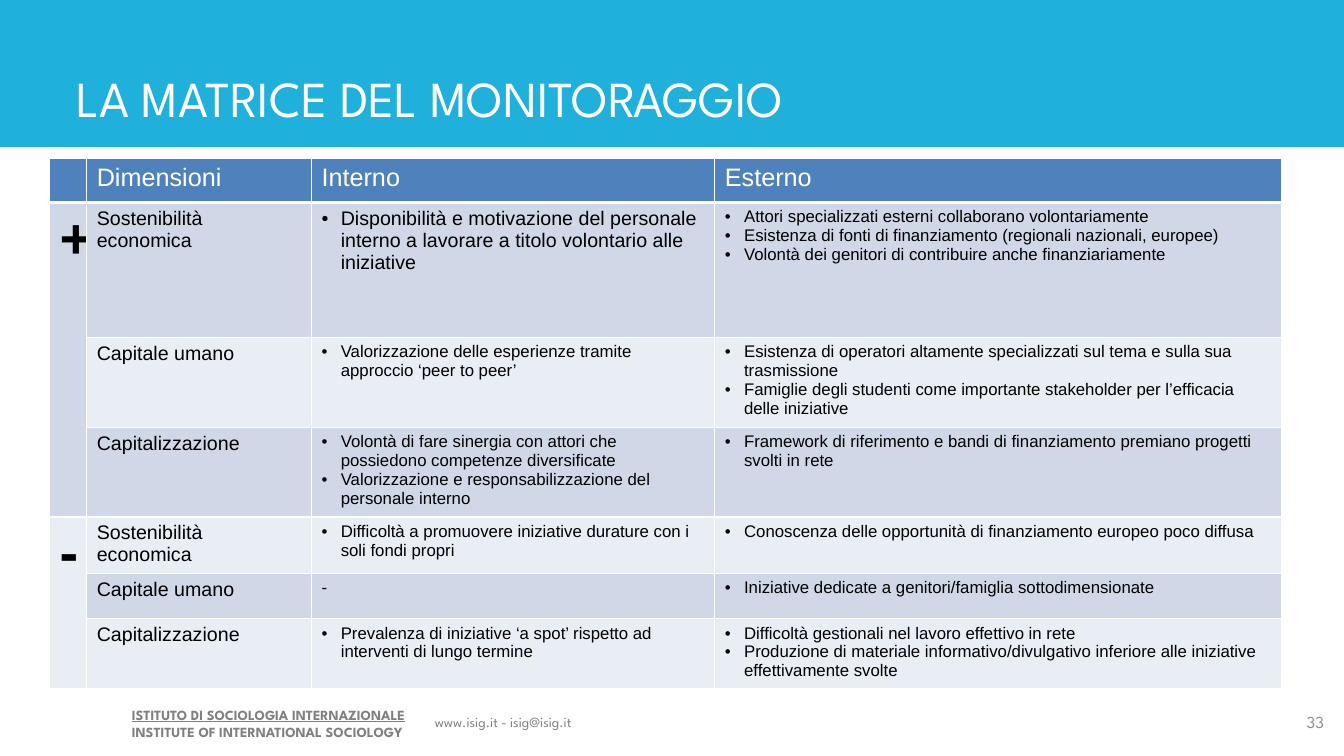
from pptx import Presentation
from pptx.dml.color import RGBColor
from pptx.enum.shapes import MSO_SHAPE
from pptx.enum.text import MSO_ANCHOR, MSO_AUTO_SIZE, PP_ALIGN
from pptx.oxml.ns import qn
from pptx.util import Inches, Pt
from lxml import etree

RECTANGLE = MSO_SHAPE.RECTANGLE
TOP, MIDDLE, BOTTOM = MSO_ANCHOR.TOP, MSO_ANCHOR.MIDDLE, MSO_ANCHOR.BOTTOM
LEFT, CENTER, RIGHT = PP_ALIGN.LEFT, PP_ALIGN.CENTER, PP_ALIGN.RIGHT
JUSTIFY = PP_ALIGN.JUSTIFY
NO_AUTOFIT = MSO_AUTO_SIZE.NONE
TITLE_ONLY = 5

COLORS = {
    "banner": "1FB0DC", "header": "4F81BD", "dark band": "D0D8E8",
    "light band": "E9EDF4", "white": "FFFFFF", "black": "000000",
    "institute": "7F7F7F", "contact": "808080", "number": "8C8C8C",
}
HEADING_FONT, TABLE_FONT = "League Spartan", "Arial"

COLUMN_WIDTHS = [0.37, 2.23, 4, 5.62]
ROW_HEIGHTS = [0.44, 1.34, 0.89, 0.89, 0.56, 0.45, 0.69]
HEADERS = ["Dimensioni", "Interno", "Esterno"]
DIMENSIONS = ["Sostenibilità economica", "Capitale umano", "Capitalizzazione"]
SIGNS = [("+", CENTER, "dark band"), ("-", LEFT, "light band")]

# One pair of lists (internal, external) for each row below the header
FACTORS = [
    (["Disponibilità e motivazione del personale interno a lavorare a titolo volontario alle iniziative"],
     ["Attori specializzati esterni collaborano volontariamente",
      "Esistenza di fonti di finanziamento (regionali nazionali, europee)",
      "Volontà dei genitori di contribuire anche finanziariamente"]),
    (["Valorizzazione delle esperienze tramite approccio ‘peer to peer’"],
     ["Esistenza di operatori altamente specializzati sul tema e sulla sua trasmissione",
      "Famiglie degli studenti come importante stakeholder per l’efficacia delle iniziative"]),
    (["Volontà di fare sinergia con attori che possiedono competenze diversificate",
      "Valorizzazione e responsabilizzazione del personale interno"],
     ["Framework di riferimento e bandi di finanziamento premiano progetti svolti in rete"]),
    (["Difficoltà a promuovere iniziative durature con i soli fondi propri"],
     ["Conoscenza delle opportunità di finanziamento europeo poco diffusa"]),
    (["-"],
     ["Iniziative dedicate a genitori/famiglia sottodimensionate"]),
    (["Prevalenza di iniziative ‘a spot’ rispetto ad interventi di lungo termine"],
     ["Difficoltà gestionali nel lavoro effettivo in rete",
      "Produzione di materiale informativo/divulgativo inferiore alle iniziative effettivamente svolte"]),
]


def color(name):
    return RGBColor.from_string(COLORS[name])


def format_paragraph(paragraph, text, size, color_name, font=TABLE_FONT,
                     align=LEFT, bold=False, underline=False):
    paragraph.text = text
    paragraph.alignment = align
    text_format = {"name": font, "size": Pt(size), "bold": bold, "underline": underline}
    for run in paragraph.runs:
        for attribute, value in text_format.items():
            setattr(run.font, attribute, value)
        run.font.color.rgb = color(color_name)


def add_bullet(paragraph):
    properties = paragraph._p.get_or_add_pPr()
    properties.set("marL", str(Inches(0.19)))
    properties.set("indent", str(Inches(-0.19)))
    etree.SubElement(properties, qn("a:buFont")).set("typeface", TABLE_FONT)
    etree.SubElement(properties, qn("a:buChar")).set("char", "•")


def add_banner(slide, title):
    banner = slide.shapes.add_shape(RECTANGLE, 0, 0, Inches(13.33), Inches(1.46))
    banner.shadow.inherit = False
    banner.fill.solid()
    banner.fill.fore_color.rgb = color("banner")
    banner.line.fill.background()
    title.element.addprevious(banner.element)


def fill_title(title, text):
    position = {"left": 0.66, "top": 0.19, "width": 11.14, "height": 1.13}
    for attribute, value in position.items():
        setattr(title, attribute, Inches(value))
    title.text_frame.auto_size = NO_AUTOFIT
    title.text_frame.vertical_anchor = BOTTOM
    format_paragraph(title.text_frame.paragraphs[0], text, 36, "white", HEADING_FONT)


def add_text(slide, left, top, width, height, lines, size, color_name,
             align, wrap=False, anchor=TOP):
    """Each line is a pair: its text and the formats special to it."""
    box = slide.shapes.add_textbox(*map(Inches, (left, top, width, height)))
    frame = box.text_frame
    frame.word_wrap = wrap
    frame.vertical_anchor = anchor
    for index, (text, special) in enumerate(lines):
        paragraph = frame.add_paragraph() if index else frame.paragraphs[0]
        format_paragraph(paragraph, text, size, color_name, HEADING_FONT, align, **special)


def style_cell(cell, fill_name, bottom_width=1):
    properties = cell._tc.get_or_add_tcPr()
    for side, width in {"L": 1, "R": 1, "T": 1, "B": bottom_width}.items():
        line = etree.SubElement(properties, qn(f"a:ln{side}"), w=str(Pt(width)))
        line_fill = etree.SubElement(line, qn("a:solidFill"))
        etree.SubElement(line_fill, qn("a:srgbClr"), val=COLORS["white"])
    cell.fill.solid()
    cell.fill.fore_color.rgb = color(fill_name)


def fill_factors(cell, factors, size):
    for index, factor in enumerate(factors):
        paragraph = cell.text_frame.add_paragraph() if index else cell.text_frame.paragraphs[0]
        if factor != "-":
            add_bullet(paragraph)
        format_paragraph(paragraph, factor, size, "black")


def add_matrix(slide):
    frame = slide.shapes.add_table(
        len(ROW_HEIGHTS), len(COLUMN_WIDTHS), Inches(0.49), Inches(1.57),
        Inches(sum(COLUMN_WIDTHS)), Inches(sum(ROW_HEIGHTS)))
    table = frame.table
    for column, width in zip(table.columns, COLUMN_WIDTHS):
        column.width = Inches(width)
    for row, height in zip(table.rows, ROW_HEIGHTS):
        row.height = Inches(height)

    # Header row
    for cell in table.rows[0].cells:
        style_cell(cell, "header", bottom_width=3)
    for column, header in enumerate(HEADERS, start=1):
        format_paragraph(table.cell(0, column).text_frame.paragraphs[0], header, 18, "white")

    # Dimensions with their internal and external factors
    for row, (internal, external) in enumerate(FACTORS, start=1):
        band = "dark band" if row % 2 else "light band"
        for column in range(1, len(COLUMN_WIDTHS)):
            style_cell(table.cell(row, column), band)
        dimension = DIMENSIONS[(row - 1) % len(DIMENSIONS)]
        format_paragraph(table.cell(row, 1).text_frame.paragraphs[0], dimension, 14, "black")
        fill_factors(table.cell(row, 2), internal, 14 if row == 1 else 12)
        fill_factors(table.cell(row, 3), external, 12)

    # Plus and minus, each beside one set of dimensions
    span = len(DIMENSIONS)
    for index, (sign, align, band) in enumerate(SIGNS):
        first = 1 + index * span
        for row in range(first, first + span):
            style_cell(table.cell(row, 0), band)
        cell = table.cell(first, 0)
        cell.merge(table.cell(first + span - 1, 0))
        format_paragraph(cell.text_frame.paragraphs[0], sign, 40, "black", align=align, bold=True)


def main():
    presentation = Presentation()
    presentation.slide_width = Inches(13.33)
    presentation.slide_height = Inches(7.5)
    slide = presentation.slides.add_slide(presentation.slide_layouts[TITLE_ONLY])

    # Heading
    title = slide.shapes.title
    add_banner(slide, title)
    fill_title(title, "LA MATRICE DEL MONITORAGGIO")

    add_matrix(slide)

    # Footer
    institute = [
        ("ISTITUTO DI SOCIOLOGIA INTERNAZIONALE", {"bold": True, "underline": True}),
        ("INSTITUTE OF INTERNATIONAL SOCIOLOGY", {"bold": True}),
    ]
    add_text(slide, 1.21, 6.96, 3.02, 0.44, institute, 10, "institute", JUSTIFY)
    add_text(slide, 4.15, 7.03, 1.68, 0.27, [("www.isig.it - isig@isig.it", {})],
             10, "contact", CENTER)
    add_text(slide, 12.76, 6.96, 0.47, 0.4, [("33", {})], 12, "number", RIGHT,
             wrap=True, anchor=MIDDLE)

    presentation.save("out.pptx")


if __name__ == "__main__":
    main()
